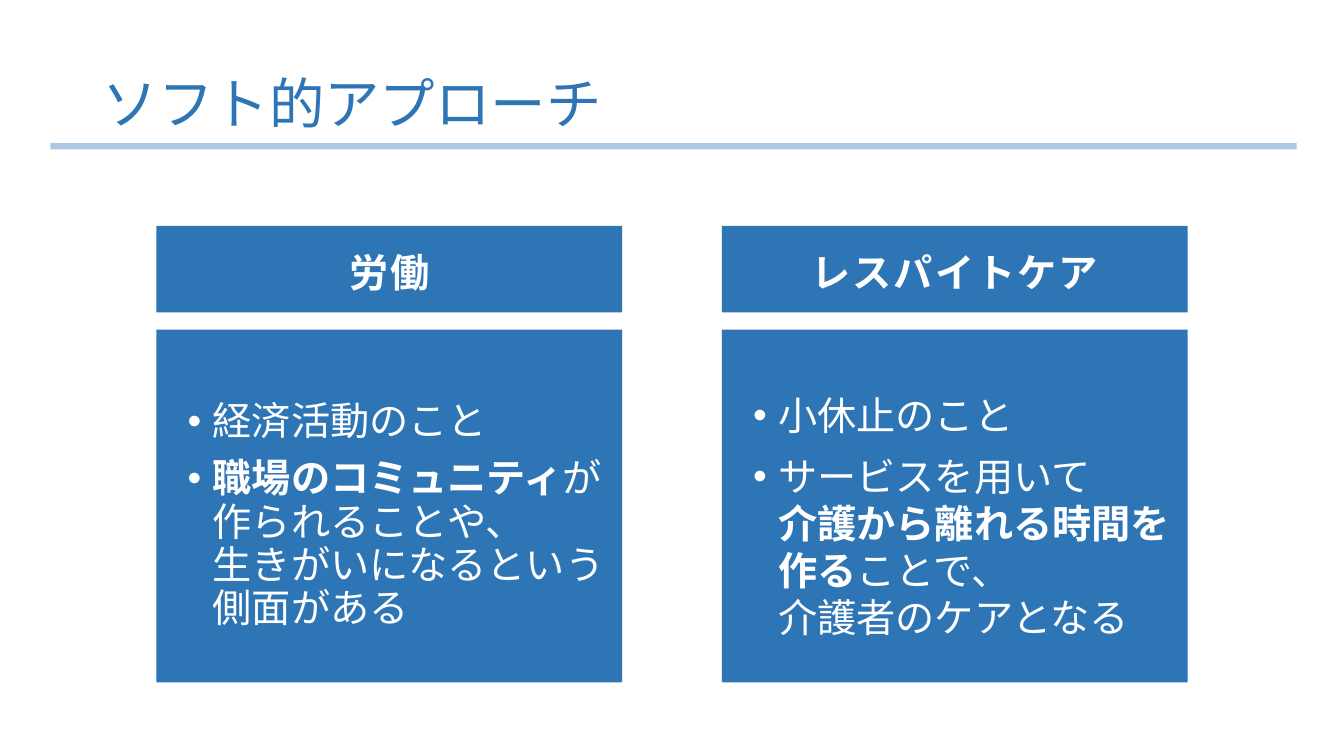
from lxml import etree
from pptx import Presentation
from pptx.dml.color import RGBColor
from pptx.enum.shapes import MSO_CONNECTOR, MSO_SHAPE
from pptx.enum.text import MSO_ANCHOR, PP_ALIGN
from pptx.oxml.ns import qn
from pptx.util import Inches, Pt

STRAIGHT = MSO_CONNECTOR.STRAIGHT
RECTANGLE = MSO_SHAPE.RECTANGLE
MIDDLE = MSO_ANCHOR.MIDDLE
LEFT, CENTER = PP_ALIGN.LEFT, PP_ALIGN.CENTER
FONT = "Noto Sans CJK JP"
COLORS = {"blue": "2E75B6", "white": "FFFFFF"}


def set_frame(shape, insets):
    frame = shape.text_frame
    frame.word_wrap = True
    frame.vertical_anchor = MIDDLE
    frame.margin_left, frame.margin_top, frame.margin_right, frame.margin_bottom = map(Inches, insets)
    return frame


def add_text(paragraph, text, size, color, bold=False):
    run = paragraph.add_run()
    run.text = text
    run.font.size = Pt(size)
    run.font.bold = bold
    run.font.name = FONT
    run.font.color.rgb = RGBColor.from_string(COLORS[color])
    properties = run.font._element
    etree.SubElement(properties, qn("a:ea"), typeface=FONT)
    return properties


prs = Presentation()
prs.slide_width, prs.slide_height = Inches(13.33), Inches(7.5)
slide = prs.slides.add_slide(prs.slide_layouts[6])

title_rule = slide.shapes.add_connector(STRAIGHT, Inches(0.5), Inches(1.45), Inches(12.86), Inches(1.45))
title_rule.line.width = Pt(4.5)
title_rule.line.color.rgb = RGBColor.from_string(COLORS["blue"])
rule_color = title_rule._element.spPr.find(".//" + qn("a:srgbClr"))
etree.SubElement(rule_color, qn("a:alpha"), val="40000")
etree.SubElement(title_rule._element.spPr, qn("a:effectLst"))

title = slide.shapes.add_textbox(Inches(0.92), Inches(0.52), Inches(11.5), Inches(0.86))
title_line = set_frame(title, (0.1, 0.24, 0.1, 0.02)).paragraphs[0]
title_line.line_spacing = 0.9
add_text(title_line, "ソフト的アプローチ", 39.6, "blue")

approaches = [
    ("労働", 0.92, [
        [("経済活動のこと", False)],
        [("職場のコミュニティ", True), ("が作られることや、", False), None,
         ("生きがいになるという側面がある", False)],
    ]),
    ("レスパイトケア", 1.0, [
        [("小休止のこと", False)],
        [("サービスを用いて", False), None,
         ("介護から離れる時間を作る", True), ("ことで、", False), None,
         ("介護者のケアとなる", False)],
    ]),
]

for column, (heading, spacing, points) in enumerate(approaches):
    left = Inches(1.55 + column * 5.61)
    header = slide.shapes.add_shape(RECTANGLE, left, Inches(2.24), Inches(4.62), Inches(0.86))
    body = slide.shapes.add_shape(RECTANGLE, left, Inches(3.27), Inches(4.62), Inches(3.5))
    for panel in (header, body):
        panel.shadow.inherit = False
        panel.fill.solid()
        panel.fill.fore_color.rgb = RGBColor.from_string(COLORS["blue"])
        panel.line.fill.background()

    heading_line = set_frame(header, (0.1, 0.05, 0.1, 0)).paragraphs[0]
    heading_line.alignment = CENTER
    add_text(heading_line, heading, 28, "white", True).set("spc", "150")

    body_frame = set_frame(body, (0.31, 0.2, 0.08, 0))
    for index, pieces in enumerate(points):
        point = body_frame.add_paragraph() if index else body_frame.paragraphs[0]
        point.alignment = LEFT
        point.line_spacing = spacing
        point.space_before = Pt(10)
        layout = point._p.get_or_add_pPr()
        layout.set("marL", str(Inches(0.25)))
        layout.set("indent", str(-Inches(0.25)))
        etree.SubElement(layout, qn("a:buFont"), typeface="Arial")
        etree.SubElement(layout, qn("a:buChar"), char="•")
        for piece in pieces:
            if piece is None:
                point.add_line_break()
            else:
                text, bold = piece
                add_text(point, text, 28, "white", bold)

prs.save("out.pptx")
